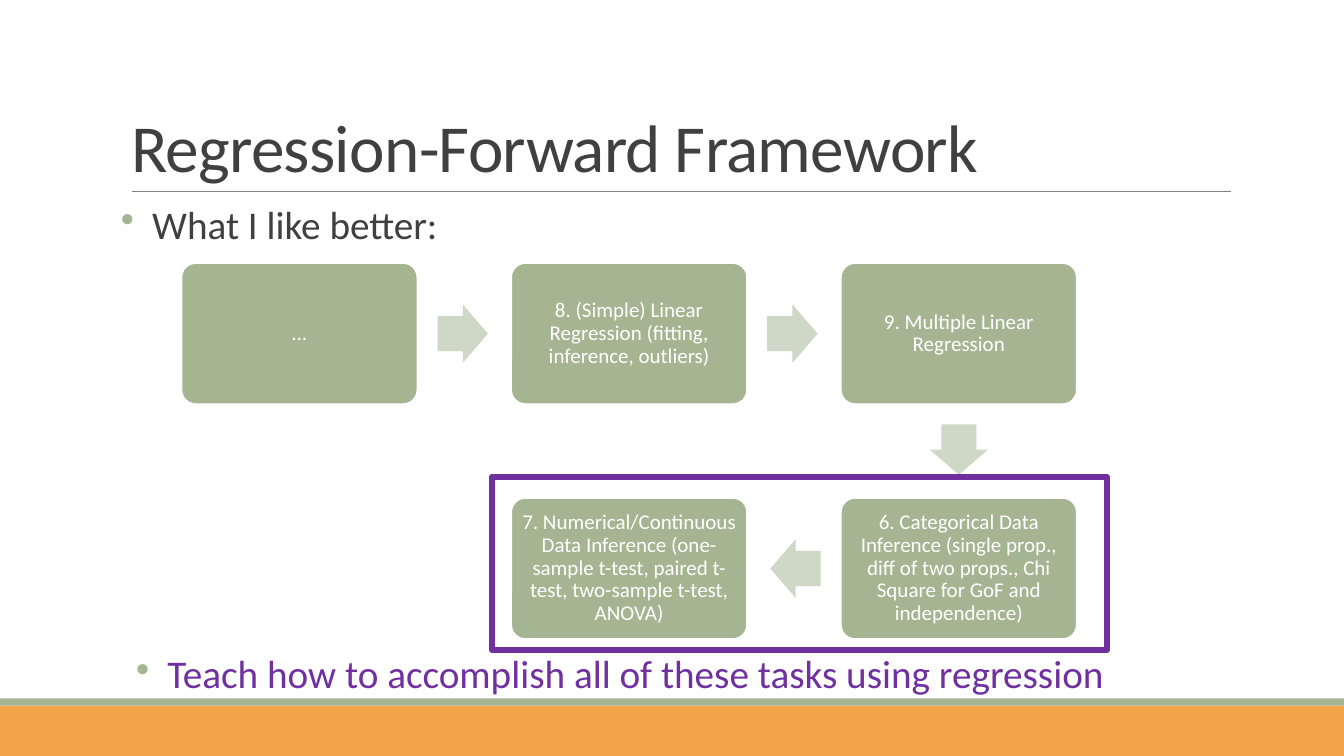
import dataclasses

import lxml.etree
import pptx
import pptx.dml.color
import pptx.enum.shapes
import pptx.enum.text
import pptx.oxml.ns
import pptx.util

Inches = pptx.util.Inches
Pt = pptx.util.Pt
MSO_SHAPE = pptx.enum.shapes.MSO_SHAPE
ALIGN = pptx.enum.text.PP_ALIGN
ANCHOR = pptx.enum.text.MSO_ANCHOR
qn = pptx.oxml.ns.qn


@dataclasses.dataclass(frozen=True)
class Theme:
    font: str = "Calibri"
    title_size: float = 48
    body_size: float = 28
    step_size: float = 15
    text: str = "404040"
    green: str = "A5B592"
    pale_green: str = "CFD7C7"
    orange: str = "F3A447"
    purple: str = "7030A0"
    grey: str = "808080"
    white: str = "FFFFFF"


THEME = Theme()


def rgb(value):
    return pptx.dml.color.RGBColor.from_string(value)


def style_paragraph(p, size, color, spacing=0.9):
    p.line_spacing = spacing
    for r in p.runs:
        r.font.name = THEME.font
        r.font.size = Pt(size)
        r.font.color.rgb = rgb(color)


def set_insets(tf, horizontal, vertical):
    tf.margin_left = tf.margin_right = Inches(horizontal)
    tf.margin_top = tf.margin_bottom = Inches(vertical)


def add_box(s, kind, left, top, width, height, fill=None, line=None, weight=1):
    sp = s.shapes.add_shape(kind, Inches(left), Inches(top), Inches(width), Inches(height))
    sp.shadow.inherit = False
    if fill:
        sp.fill.solid()
        sp.fill.fore_color.rgb = rgb(fill)
    else:
        sp.fill.background()
    if line:
        sp.line.color.rgb = rgb(line)
        sp.line.width = Pt(weight)
    else:
        sp.line.fill.background()
    return sp


def add_footer_bands(s, top, width, height, stripe):
    add_box(s, MSO_SHAPE.RECTANGLE, 0, top + stripe, width, height - stripe, THEME.orange)
    add_box(s, MSO_SHAPE.RECTANGLE, 0, top, width, stripe, THEME.green)


def add_title(s, text, left, top, width, height):
    sp = s.shapes.title
    sp.left, sp.top = Inches(left), Inches(top)
    sp.width, sp.height = Inches(width), Inches(height)
    tf = sp.text_frame
    tf.text = text
    tf.word_wrap = True
    tf.auto_size = pptx.enum.text.MSO_AUTO_SIZE.NONE
    tf.vertical_anchor = ANCHOR.BOTTOM
    p = tf.paragraphs[0]
    p.alignment = ALIGN.LEFT
    style_paragraph(p, THEME.title_size, THEME.text, 0.85)
    p.runs[0].font._element.set("spc", "-50")

    rule_left, rule_y = Inches(left + 0.11), Inches(top + height)
    rule = s.shapes.add_connector(
        pptx.enum.shapes.MSO_CONNECTOR.STRAIGHT,
        rule_left, rule_y, rule_left + Inches(10.9), rule_y)
    rule.line.color.rgb = rgb(THEME.grey)
    rule.line.width = Pt(0.5)
    lxml.etree.SubElement(rule._element.spPr, qn("a:effectLst"))


def add_bullet(s, text, color, left, top, width, height):
    sp = s.shapes.add_textbox(Inches(left), Inches(top), Inches(width), Inches(height))
    tf = sp.text_frame
    tf.word_wrap = True
    set_insets(tf, 0, 0.05)
    p = tf.paragraphs[0]
    p.text = text
    style_paragraph(p, THEME.body_size, color)
    p.space_before, p.space_after = Pt(12), Pt(2)
    pPr = p._p.get_or_add_pPr()
    pPr.set("marL", str(Inches(0.31)))
    pPr.set("indent", str(Inches(-0.31)))
    bullet_color = lxml.etree.SubElement(pPr, qn("a:buClr"))
    lxml.etree.SubElement(bullet_color, qn("a:srgbClr")).set("val", THEME.green)
    lxml.etree.SubElement(pPr, qn("a:buChar")).set("char", "•")


def add_step(s, text, left, top, width, height):
    sp = add_box(s, MSO_SHAPE.ROUNDED_RECTANGLE, left, top, width, height,
                 THEME.green, THEME.white, 1.25)
    sp.adjustments[0] = 0.1
    tf = sp.text_frame
    tf.word_wrap = True
    tf.vertical_anchor = ANCHOR.MIDDLE
    set_insets(tf, 0.06, 0.06)
    p = tf.paragraphs[0]
    p.text = text
    p.alignment = ALIGN.CENTER
    style_paragraph(p, THEME.step_size, THEME.white)


def add_arrow(s, center_x, center_y, rotation):
    width, height = 0.5, 0.58
    sp = add_box(s, MSO_SHAPE.RIGHT_ARROW, center_x - width / 2, center_y - height / 2,
                 width, height, THEME.pale_green)
    sp.adjustments[0], sp.adjustments[1] = 0.6, 0.5
    sp.rotation = rotation


def add_flow(s, steps, left, top):
    width, height = 2.34, 1.4
    column_step, row_step = 3.27, 2.33
    reach = 0.45
    directions = {(1, 0): 0, (0, 1): 90, (-1, 0): 180}
    for i, (column, row, text) in enumerate(steps):
        x, y = left + column * column_step, top + row * row_step
        add_step(s, text, x, y, width, height)
        if i + 1 < len(steps):
            next_column, next_row, _ = steps[i + 1]
            dx, dy = next_column - column, next_row - row
            add_arrow(s, x + width / 2 + dx * (width / 2 + reach),
                      y + height / 2 + dy * (height / 2 + reach), directions[dx, dy])


def build_framework_slide(prs):
    s = prs.slides.add_slide(prs.slide_layouts[5])
    add_footer_bands(s, 6.93, 13.33, 0.57, 0.07)
    add_title(s, "Regression-Forward Framework", 1.2, 0.31, 11, 1.59)
    add_bullet(s, "What I like better:", THEME.text, 1.2, 1.99, 5.66, 0.6)
    add_flow(s, [
        (0, 0, "…"),
        (1, 0, "8. (Simple) Linear Regression (fitting, inference, outliers)"),
        (2, 0, "9. Multiple Linear Regression"),
        (2, 1, "6. Categorical Data Inference (single prop., diff of two props., "
               "Chi Square for GoF and independence)"),
        (1, 1, "7. Numerical/Continuous Data Inference (one-sample t-test, "
               "paired t-test, two-sample t-test, ANOVA)"),
    ], 1.8, 2.61)
    add_box(s, MSO_SHAPE.RECTANGLE, 4.88, 4.73, 6.1, 1.72, line=THEME.purple, weight=4)
    add_bullet(s, "Teach how to accomplish all of these tasks using regression",
               THEME.purple, 1.35, 6.45, 10.1, 0.63)


def main():
    prs = pptx.Presentation()
    prs.slide_width, prs.slide_height = Inches(13.33), Inches(7.5)
    build_framework_slide(prs)
    prs.save("out.pptx")


if __name__ == "__main__":
    main()
